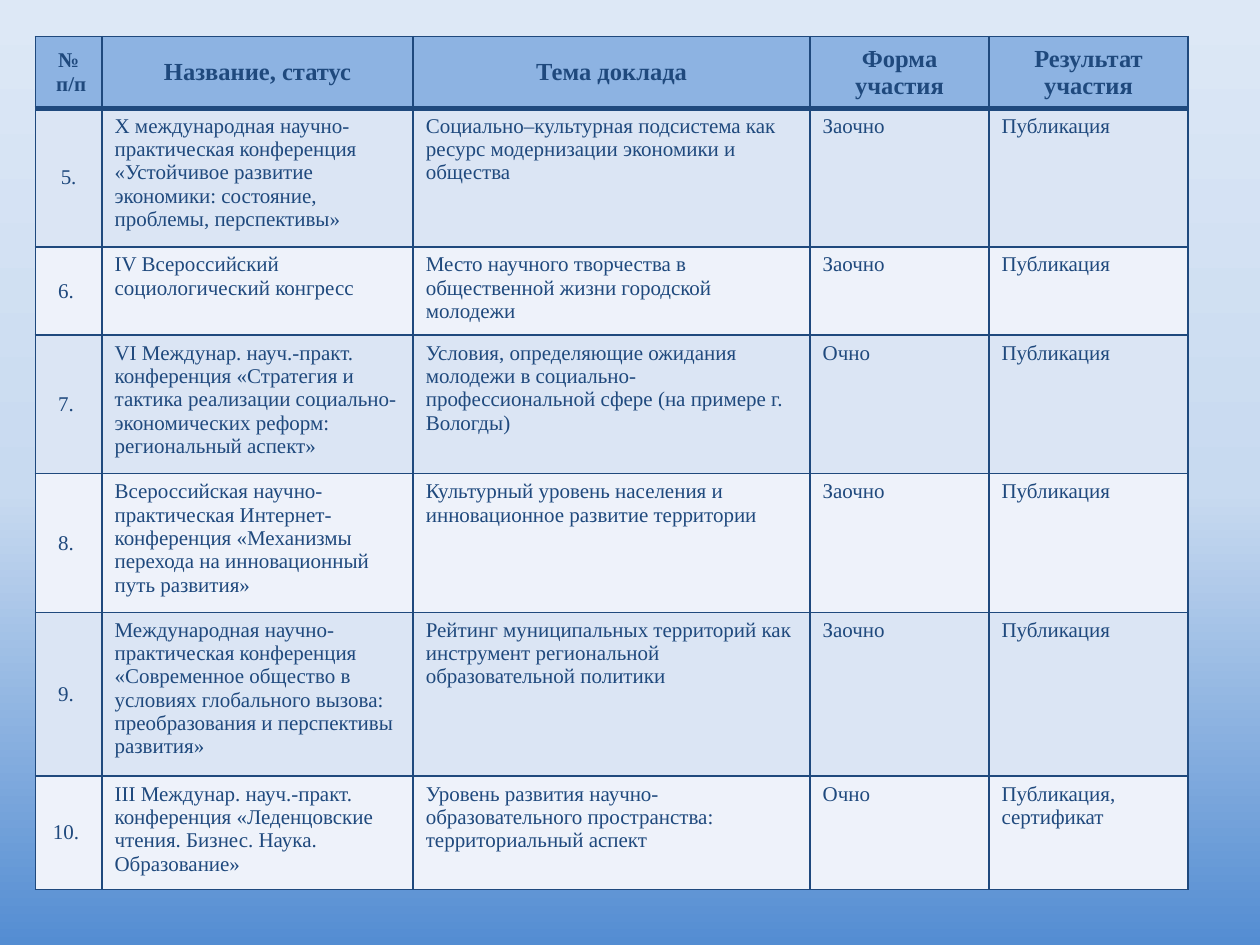
from copy import deepcopy
from dataclasses import dataclass

from lxml.etree import SubElement
from pptx import Presentation
from pptx.dml.color import RGBColor as Rgb
from pptx.enum.text import MSO_ANCHOR as Anchor, PP_ALIGN as Align
from pptx.oxml.ns import qn
from pptx.util import Inches, Pt


@dataclass(frozen=True)
class Theme:
    font: str = "Times New Roman"
    ink: str = "1F497D"
    header_fill: str = "8DB3E2"
    bands: tuple = ("DBE5F4", "EEF2FA")
    backdrop: tuple = ((0, "548DD2"), (0.48, "C8DAF0"), (1, "DDE8F6"))
    body_size: int = 12
    header_size: int = 14
    rule: int = 1
    header_rule: int = 3


THEME = Theme()
SLIDE_WIDTH, SLIDE_HEIGHT = 10, 7.5
LEFT, TOP = 0.28, 0.29
COLUMNS = (0.53, 2.47, 3.15, 1.42, 1.58)
HEADER_HEIGHT, LINE_HEIGHT, ROW_PADDING = 0.57, 0.2, 0.1

HEADINGS = ("№\n п/п", "Название, статус", "Тема доклада", "Форма участия", "Результат участия")

# Lines of text in the tallest cell, then the five cells of the row
CONFERENCES = (
    (5, "5.", "X международная научно-практическая конференция «Устойчивое развитие "
     "экономики: состояние, проблемы, перспективы»",
     "Социально–культурная подсистема как ресурс модернизации экономики и общества",
     "Заочно", "Публикация"),
    (3, "6. ", "IV Всероссийский социологический конгресс",
     "Место научного творчества в общественной жизни городской молодежи",
     "Заочно", "Публикация"),
    (5, "7. ", "VI Междунар. науч.-практ. конференция «Стратегия и тактика реализации "
     "социально-экономических реформ: региональный аспект»",
     "Условия, определяющие ожидания молодежи в социально-профессиональной сфере "
     "(на примере г. Вологды)",
     "Очно", "Публикация"),
    (5, "8. ", "Всероссийская научно-практическая Интернет-конференция «Механизмы "
     "перехода на инновационный путь развития»",
     "Культурный уровень населения и инновационное развитие территории",
     "Заочно", "Публикация"),
    (6, "9. ", "Международная научно-практическая конференция «Современное общество "
     "в условиях глобального вызова: преобразования и перспективы развития»",
     "Рейтинг муниципальных территорий как инструмент региональной образовательной политики",
     "Заочно", "Публикация"),
    (4, "10. ", "III Междунар. науч.-практ. конференция «Леденцовские чтения. "
     "Бизнес. Наука. Образование»",
     "Уровень развития научно-образовательного пространства: территориальный аспект",
     "Очно", "Публикация, сертификат"),
)


def set_attributes(target, values):
    for name, value in values.items():
        setattr(target, name, value)


def paint_backdrop(slide):
    fill = slide.background.fill
    fill.gradient()
    fill.gradient_angle = 90
    stop_list = slide.element.find(".//" + qn("a:gsLst"))
    stop_list.append(deepcopy(stop_list[-1]))
    for stop, (position, color) in zip(fill.gradient_stops, THEME.backdrop):
        stop.position = position
        stop.color.rgb = Rgb.from_string(color)


def draw_borders(cell, widths):
    properties = cell._tc.get_or_add_tcPr()
    for index, (side, width) in enumerate(zip("LRTB", widths)):
        border = SubElement(properties, qn(f"a:ln{side}"), w=str(Pt(width)))
        properties.insert(index, border)
        ink = SubElement(border, qn("a:solidFill"))
        SubElement(ink, qn("a:srgbClr"), val=THEME.ink)


def write_cell(cell, text, fill, size, bold=False, centered=False, top=1, bottom=1):
    cell.text = text
    set_attributes(cell, {
        "vertical_anchor": Anchor.MIDDLE if centered else Anchor.TOP,
        "margin_left": Inches(0.1), "margin_right": Inches(0.1),
        "margin_top": Inches(0.05), "margin_bottom": Inches(0.05),
    })
    cell.fill.solid()
    cell.fill.fore_color.rgb = Rgb.from_string(fill)
    for paragraph in cell.text_frame.paragraphs:
        paragraph.alignment = Align.CENTER if centered else Align.LEFT
        for run in paragraph.runs:
            set_attributes(run.font, {"name": THEME.font, "size": Pt(size), "bold": bold})
            run.font.color.rgb = Rgb.from_string(THEME.ink)
    draw_borders(cell, (THEME.rule, THEME.rule, top, bottom))


def add_conference_table(slide):
    heights = [HEADER_HEIGHT] + [lines * LINE_HEIGHT + ROW_PADDING
                                 for lines, *_ in CONFERENCES]
    table = slide.shapes.add_table(
        len(heights), len(COLUMNS), Inches(LEFT), Inches(TOP),
        Inches(sum(COLUMNS)), Inches(sum(heights))).table
    for column, width in zip(table.columns, COLUMNS):
        column.width = Inches(width)
    for row, height in zip(table.rows, heights):
        row.height = Inches(height)

    # Header row
    for column, heading in enumerate(HEADINGS):
        write_cell(table.cell(0, column), heading, THEME.header_fill,
                   THEME.header_size if column else THEME.body_size,
                   bold=True, centered=True, top=THEME.rule, bottom=THEME.header_rule)

    # Banded conference rows
    for row, (_, *entries) in enumerate(CONFERENCES, start=1):
        for column, entry in enumerate(entries):
            write_cell(table.cell(row, column), entry,
                       THEME.bands[(row - 1) % len(THEME.bands)], THEME.body_size,
                       centered=column == 0,
                       top=THEME.header_rule if row == 1 else THEME.rule,
                       bottom=THEME.rule)


def main():
    deck = Presentation()
    set_attributes(deck, {"slide_width": Inches(SLIDE_WIDTH),
                          "slide_height": Inches(SLIDE_HEIGHT)})
    slide = deck.slides.add_slide(deck.slide_layouts[6])
    paint_backdrop(slide)
    add_conference_table(slide)
    deck.save("out.pptx")


if __name__ == "__main__":
    main()
